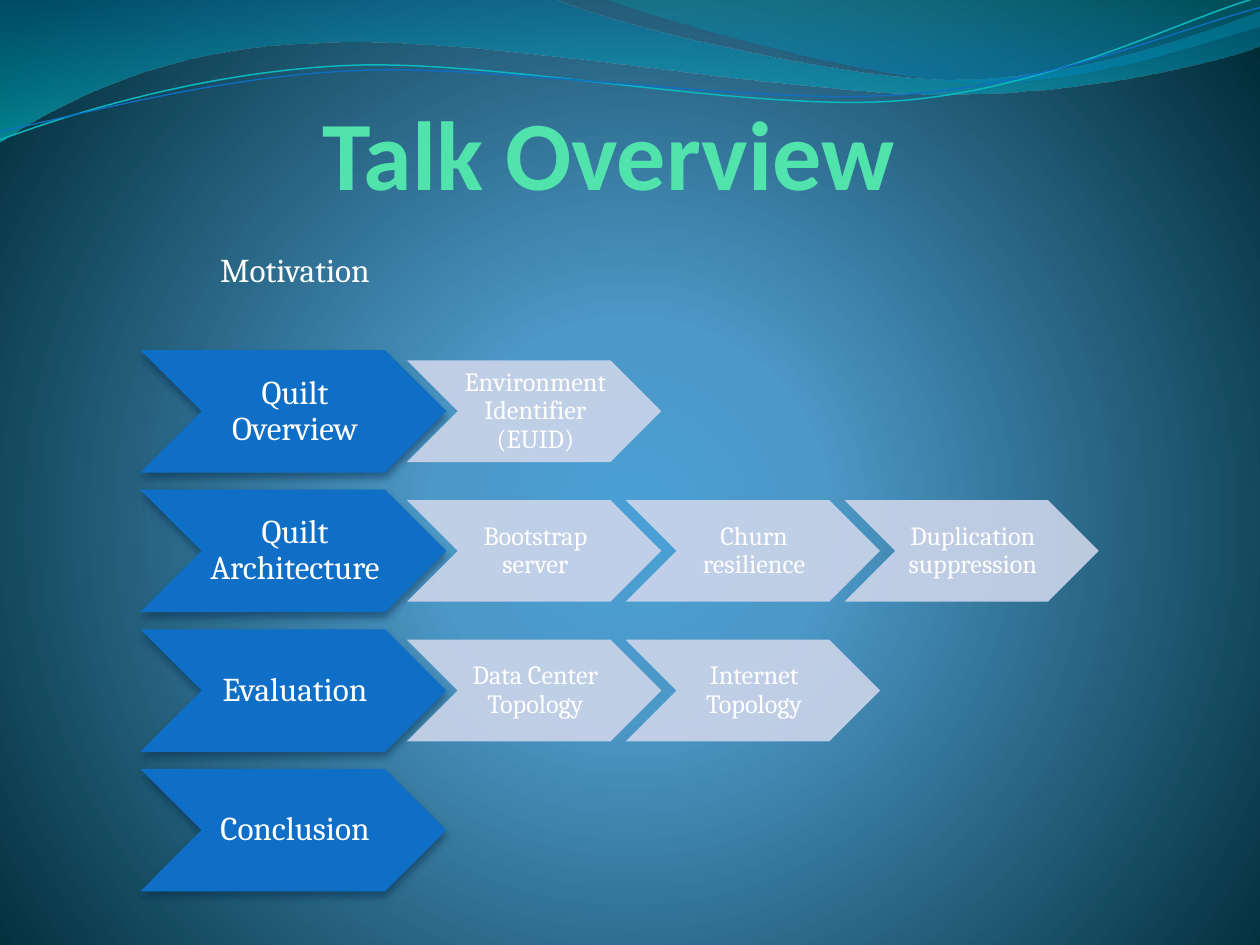
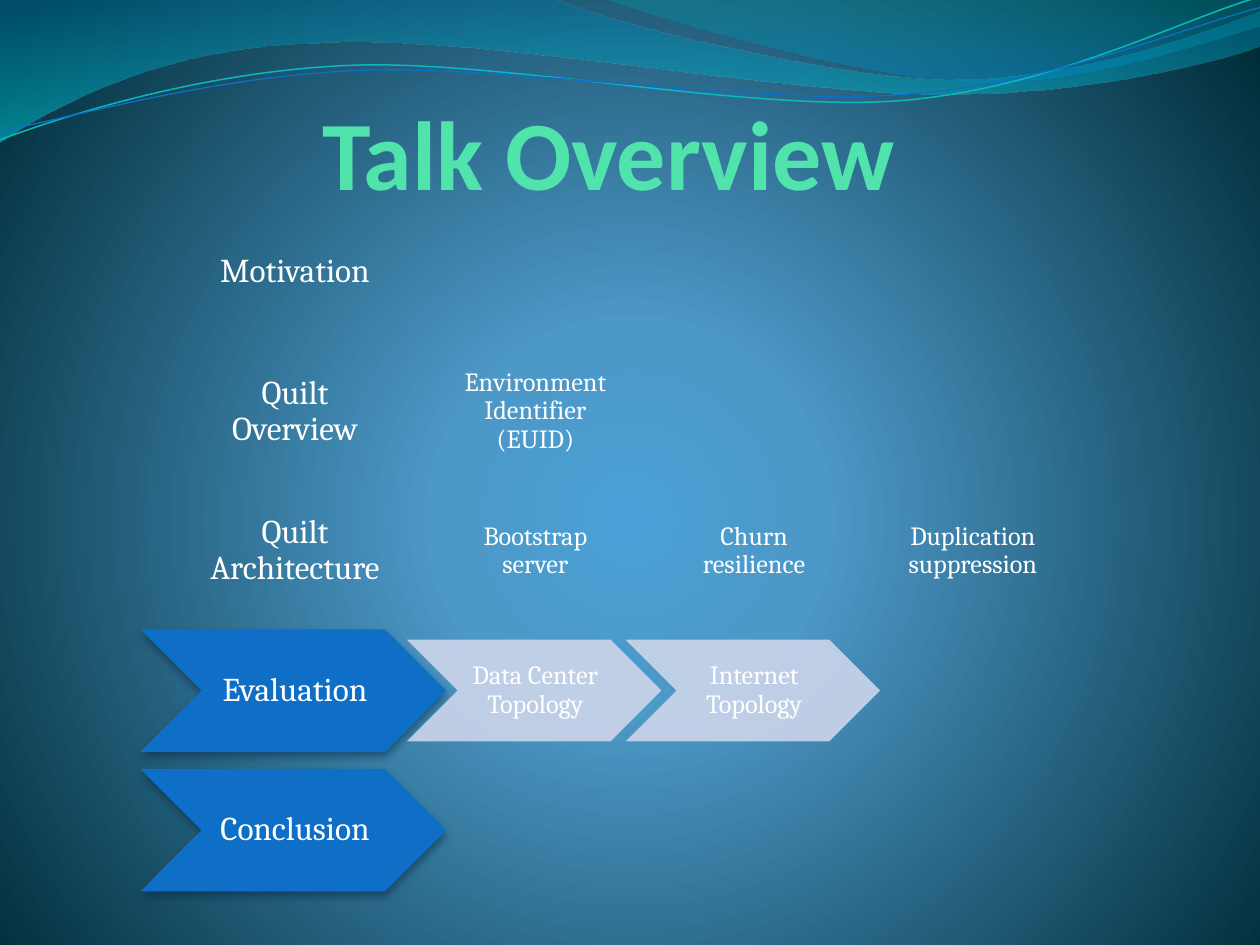
from dataclasses import dataclass
from typing import NamedTuple

from lxml import etree
from pptx import Presentation
from pptx.dml.color import RGBColor
from pptx.enum.shapes import MSO_SHAPE
from pptx.enum.text import MSO_ANCHOR, MSO_AUTO_SIZE, PP_ALIGN
from pptx.oxml import parse_xml
from pptx.oxml.ns import nsdecls, qn
from pptx.util import Pt


@dataclass(frozen=True)
class Theme:
    title: str = "50E3AC"
    text: str = "FFFFFF"
    step: str = "0F6FC6"
    detail: str = "CCD5EA"
    shadow: str = "042747"
    title_font: str = "Calibri"
    body_font: str = "Cambria"
    title_size: float = 56
    step_size: float = 19
    detail_size: float = 15


class Stop(NamedTuple):
    position: int
    color: str
    opacity: int = 100


@dataclass(frozen=True)
class Wave:
    start: tuple
    segments: tuple
    stops: tuple = ()
    line: str = ""
    width: float = 0


@dataclass(frozen=True)
class Chevron:
    left: float
    width: float
    height: float
    size: float
    color: str
    opacity: int = 100
    shadow: bool = False


@dataclass(frozen=True)
class Step:
    name: str
    details: tuple = ()


THEME = Theme()
STEP = Chevron(80.2, 174.8, 70, THEME.step_size, THEME.step, shadow=True)
DETAIL = Chevron(232.5, 145.4, 58.1, THEME.detail_size, THEME.detail, opacity=90)
FIRST_ROW, ROW_PITCH, DETAIL_PITCH = 120.2, 79.8, 125

BACKGROUND = (Stop(0, "4AA0D6"), Stop(25, "4C98C7"), Stop(100, "002C38"))
RADIAL = '<a:path {} path="circle"><a:fillToRect l="10000" t="110000" r="10000" b="100000"/></a:path>'
VERTICAL = '<a:lin {} ang="5400000" scaled="1"/>'

WAVES = (
    Wave((0, 0), (
        (316.8, -0.7),
        (342.7, 12.2, 478.1, 45.4, 545.8, 45.4),
        (614.2, 45.4, 689.8, 18.7, 720, 6.5),
        (720.7, 25.9),
        (707.8, 31.7, 626.4, 54.7, 537.1, 54),
        (447.8, 54, 275, 20.2, 185, 24.5),
        (92.9, 25.9, 33.1, 59.8, -0.7, 81.4),
    ), stops=(Stop(0, "0074A1", 45), Stop(100, "00C6CF", 55))),
    Wave((344.9, -0.7), (
        (366.5, 7.9, 491, 44.6, 553.7, 46.8),
        (616.3, 49.7, 691.9, 23, 720, 15.1),
        (720, 0),
    ), stops=(Stop(0, "00A1A9", 30), Stop(80, "008BBF", 45))),
    Wave((0, 79.9), (
        (34.6, 67, 113.8, 41, 199.4, 37.4),
        (284.4, 33.8, 427, 64.1, 513.4, 57.6),
        (599.8, 51.1, 675.4, 10.8, 718.6, -1.4),
    ), line="0AB8BF", width=0.85),
    Wave((0, 74.9), (
        (33.8, 69.1, 118.1, 43.9, 203.8, 40.3),
        (290.2, 36.7, 429.8, 60.5, 516.2, 54),
        (601.9, 48.2, 677.5, 15.1, 720, 4.3),
    ), line="0F6FC6", width=0.75),
)

STEPS = (
    Step("Motivation"),
    Step("Quilt Overview", ("Environment Identifier (EUID)",)),
    Step("Quilt Architecture", ("Bootstrap server", "Churn resilience", "Duplication suppression")),
    Step("Evaluation", ("Data Center Topology", "Internet Topology")),
    Step("Conclusion"),
)
COMPLETED_STEPS = (1, 3)


def rgb(color: str) -> RGBColor:
    return RGBColor.from_string(color)


def set_gradient(fill, element, stops: tuple, direction: str) -> None:
    fill.gradient()
    grad = element.find(".//" + qn("a:gradFill"))
    for child in list(grad):
        grad.remove(child)
    stop_list = etree.SubElement(grad, qn("a:gsLst"))
    for stop in stops:
        gs = etree.SubElement(stop_list, qn("a:gs"), pos=str(stop.position * 1000))
        clr = etree.SubElement(gs, qn("a:srgbClr"), val=stop.color)
        etree.SubElement(clr, qn("a:alpha"), val=str(stop.opacity * 1000))
    grad.append(parse_xml(direction.format(nsdecls("a"))))


def bend_segments(sp, segments: tuple) -> None:
    lines = iter(list(sp.element.iter(qn("a:lnTo"))))
    for segment in segments:
        first = next(lines)
        if len(segment) == 6:
            curve = etree.Element(qn("a:cubicBezTo"))
            first.addprevious(curve)
            for line in (first, next(lines), next(lines)):
                curve.append(line[0])
                line.getparent().remove(line)


def draw_wave(s, wave: Wave):
    points = [seg[i:i + 2] for seg in wave.segments for i in range(0, len(seg), 2)]
    builder = s.shapes.build_freeform(Pt(wave.start[0]), Pt(wave.start[1]))
    builder.add_line_segments([(Pt(x), Pt(y)) for x, y in points], close=bool(wave.stops))
    sp = builder.convert_to_shape()
    bend_segments(sp, wave.segments)
    sp.shadow.inherit = False
    if wave.stops:
        set_gradient(sp.fill, sp.element, wave.stops, VERTICAL)
        sp.line.fill.background()
    else:
        sp.fill.background()
        sp.line.color.rgb = rgb(wave.line)
        sp.line.width = Pt(wave.width)
    return sp


def decorate_master(prs, s) -> None:
    master = prs.slide_master
    set_gradient(master.background.fill, master.element, BACKGROUND, RADIAL)
    for i, wave in enumerate(WAVES):
        element = draw_wave(s, wave).element
        element.find(".//" + qn("p:cNvPr")).set("id", str(101 + i))
        master.shapes.element.insert(2 + i, element)


def set_title(s, text: str) -> None:
    sp = s.shapes.title
    sp.left, sp.top, sp.width, sp.height = Pt(41.8), Pt(36), Pt(612), Pt(84.2)
    tf = sp.text_frame
    tf.text = text
    tf.auto_size = MSO_AUTO_SIZE.NONE
    tf.vertical_anchor = MSO_ANCHOR.BOTTOM
    tf.margin_left = tf.margin_right = tf.margin_top = tf.margin_bottom = 0
    p = tf.paragraphs[0]
    p.alignment = PP_ALIGN.CENTER
    p.font.name, p.font.size, p.font.bold = THEME.title_font, Pt(THEME.title_size), True
    p.font.color.rgb = rgb(THEME.title)


def add_shadow(sp) -> None:
    effects = sp.element.spPr.find(qn("a:effectLst"))
    outer = etree.SubElement(
        effects, qn("a:outerShdw"), blurRad=str(Pt(4.5)), dist=str(Pt(3)),
        dir="5400000", rotWithShape="0",
    )
    clr = etree.SubElement(outer, qn("a:srgbClr"), val=THEME.shadow)
    etree.SubElement(clr, qn("a:alpha"), val="48000")


def add_chevron(s, kind: Chevron, left: float, top: float) -> None:
    sp = s.shapes.add_shape(
        MSO_SHAPE.CHEVRON, Pt(left), Pt(top), Pt(kind.width), Pt(kind.height))
    sp.shadow.inherit = False
    sp.fill.solid()
    sp.fill.fore_color.rgb = rgb(kind.color)
    sp.line.fill.background()
    if kind.opacity < 100:
        clr = sp.element.spPr.find(qn("a:solidFill")).find(qn("a:srgbClr"))
        etree.SubElement(clr, qn("a:alpha"), val=str(kind.opacity * 1000))
    if kind.shadow:
        add_shadow(sp)


def add_label(s, text: str, kind: Chevron, left: float, top: float) -> None:
    sp = s.shapes.add_textbox(
        Pt(left + kind.height / 2), Pt(top), Pt(kind.width - kind.height), Pt(kind.height))
    tf = sp.text_frame
    tf.text = text
    tf.word_wrap = True
    tf.vertical_anchor = MSO_ANCHOR.MIDDLE
    tf.margin_left, tf.margin_right = Pt(kind.size / 10), 0
    tf.margin_top = tf.margin_bottom = Pt(kind.size / 20)
    p = tf.paragraphs[0]
    p.alignment = PP_ALIGN.CENTER
    p.line_spacing = 0.9
    p.font.name, p.font.size = THEME.body_font, Pt(kind.size)
    p.font.color.rgb = rgb(THEME.text)


def add_item(s, text: str, kind: Chevron, middle: float, offset: float, completed: bool) -> None:
    left, top = kind.left + offset, middle - kind.height / 2
    if not completed:
        add_chevron(s, kind, left, top)
    add_label(s, text, kind, left, top)


def add_overview(s, completed_steps: int) -> None:
    set_title(s, "Talk Overview")
    for row, step in enumerate(STEPS):
        middle = FIRST_ROW + row * ROW_PITCH + STEP.height / 2
        completed = row < completed_steps
        add_item(s, step.name, STEP, middle, 0, completed)
        for column, detail in enumerate(step.details):
            add_item(s, detail, DETAIL, middle, column * DETAIL_PITCH, completed)


def main() -> None:
    prs = Presentation()
    prs.slide_width, prs.slide_height = Pt(720), Pt(540)
    slides = [prs.slides.add_slide(prs.slide_layouts[5]) for _ in COMPLETED_STEPS]
    decorate_master(prs, slides[0])
    for s, completed_steps in zip(slides, COMPLETED_STEPS):
        add_overview(s, completed_steps)
    prs.save("out.pptx")


if __name__ == "__main__":
    main()
